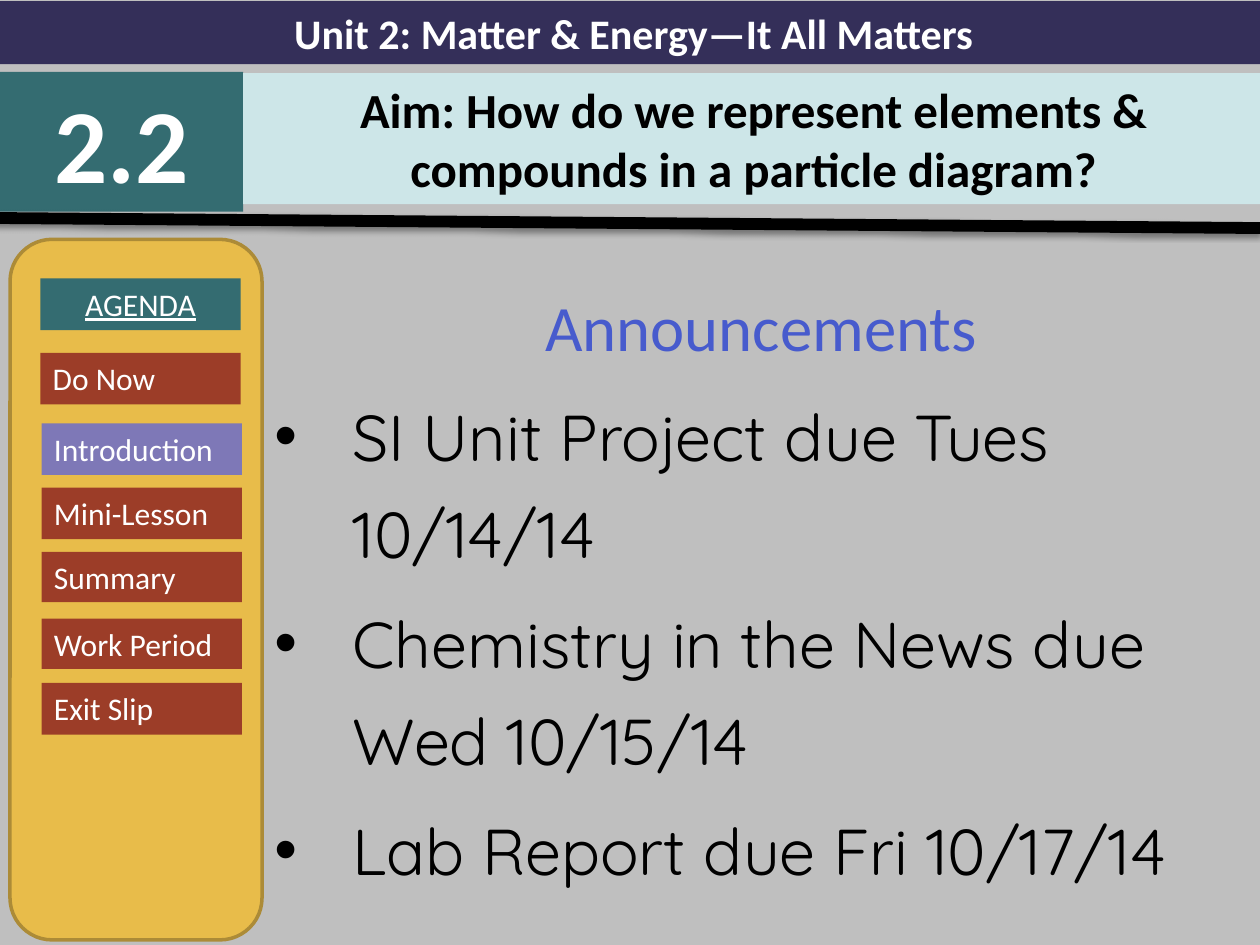
"""Builds a chemistry lesson slide with an agenda panel and announcements."""
from dataclasses import dataclass

from lxml import etree
from pptx import Presentation
from pptx.dml.color import RGBColor
from pptx.enum.shapes import MSO_CONNECTOR, MSO_SHAPE
from pptx.enum.text import MSO_AUTO_SIZE, PP_ALIGN
from pptx.oxml import parse_xml
from pptx.oxml.ns import nsdecls, qn
from pptx.util import Inches, Pt

CENTER = PP_ALIGN.CENTER
LEFT = PP_ALIGN.LEFT
GROW = MSO_AUTO_SIZE.SHAPE_TO_FIT_TEXT
STRAIGHT = MSO_CONNECTOR.STRAIGHT
ROUNDED = MSO_SHAPE.ROUNDED_RECTANGLE

WHITE, BLACK = "FFFFFF", "000000"
TEAL, RUST, VIOLET = "346C71", "9C3D28", "7E78B7"


@dataclass
class Label:
    text: str
    left: float
    top: float
    width: float
    height: float
    fill: str
    size: int = 18
    color: str = WHITE
    bold: bool = False
    underline: bool = False
    align: PP_ALIGN = LEFT


HEADER = [
    Label("Unit 2: Matter & Energy—It All Matters", 0, 0.01, 10.06, 0.5,
          "342F59", 24, bold=True, align=CENTER),
    Label("2.2", 0, 0.57, 1.93, 1.11, TEAL, 60, bold=True, align=CENTER),
    Label("Aim: How do we represent elements & compounds in a particle diagram?",
          1.93, 0.58, 8.1, 1.04, "CDE6E8", 28, BLACK, bold=True, align=CENTER),
]
AGENDA = [
    Label("AGENDA", 0.32, 2.21, 1.59, 0.41, TEAL, underline=True, align=CENTER),
    Label("Do Now", 0.32, 2.8, 1.59, 0.41, RUST),
    Label("Introduction", 0.33, 3.36, 1.59, 0.41, VIOLET),
    Label("Mini-Lesson", 0.33, 3.87, 1.59, 0.41, RUST),
    Label("Summary", 0.33, 4.38, 1.59, 0.4, RUST),
    Label("Work Period", 0.33, 4.91, 1.59, 0.4, RUST),
    Label("Exit Slip", 0.33, 5.42, 1.59, 0.41, RUST),
]
ANNOUNCEMENTS = [
    "SI Unit Project due Tues 10/14/14",
    "Chemistry in the News due Wed 10/15/14",
    "Lab Report due Fri 10/17/14",
]


def paint(color_format, color: str) -> None:
    """Set a fill or line format to a solid colour."""
    color_format.solid()
    color_format.fore_color.rgb = RGBColor.from_string(color)


def style(paragraph, font: str, size: float, color: str) -> None:
    """Set the font of a whole paragraph."""
    paragraph.font.name = font
    paragraph.font.size = Pt(size)
    paint(paragraph.font.fill, color)


def add_label(page, label: Label) -> None:
    """Draw a filled text box."""
    box = page.shapes.add_textbox(Inches(label.left), Inches(label.top),
                                  Inches(label.width), Inches(label.height))
    paint(box.fill, label.fill)
    box.text_frame.word_wrap = True
    box.text_frame.auto_size = GROW
    para = box.text_frame.paragraphs[0]
    para.text = label.text
    para.alignment = label.align
    style(para, "Calibri", label.size, label.color)
    para.font.bold = label.bold
    para.font.underline = label.underline


def add_bullet(para, indent: float) -> None:
    """Give a paragraph a hanging round bullet."""
    properties = para._p.get_or_add_pPr()
    properties.set("marL", str(Inches(indent)))
    properties.set("indent", str(-Inches(indent)))
    font = parse_xml(f'<a:buFont {nsdecls("a")} typeface="Arial"/>')
    mark = parse_xml(f'<a:buChar {nsdecls("a")} char="•"/>')
    properties.find(qn("a:defRPr")).addprevious(font)
    font.addnext(mark)


def add_announcements(page) -> None:
    """Write the heading and its bulleted list."""
    box = page.shapes.add_textbox(Inches(2.08), Inches(2.04),
                                  Inches(7.92), Inches(5.46))
    frame = box.text_frame
    frame.word_wrap = True
    heading = frame.paragraphs[0]
    heading.text = "Announcements"
    heading.alignment = CENTER
    heading.line_spacing = 1.3
    style(heading, "Calibri", 37, "475BCD")
    for text in ANNOUNCEMENTS:
        para = frame.add_paragraph()
        para.text = text
        para.line_spacing = 1.25
        para.space_before = Pt(7.4)
        style(para, "Quicksand", 37, BLACK)
        add_bullet(para, 0.62)


def add_divider(page) -> None:
    """Draw the heavy line under the header with its soft shadow."""
    divider = page.shapes.add_connector(STRAIGHT, Inches(-0.05), Inches(1.73),
                                        Inches(10), Inches(1.81))
    paint(divider.line.fill, BLACK)
    divider.line.width = Pt(6.75)
    effects = etree.SubElement(divider._element.spPr, qn("a:effectLst"))
    shadow = etree.SubElement(effects, qn("a:outerShdw"), blurRad=str(Pt(3.1)),
                              dist=str(Pt(1.6)), dir="5400000", rotWithShape="0")
    color = etree.SubElement(shadow, qn("a:srgbClr"), val=BLACK)
    etree.SubElement(color, qn("a:alpha"), val="38000")


def add_panel(page) -> None:
    """Draw the rounded panel behind the agenda."""
    panel = page.shapes.add_shape(ROUNDED, Inches(0.08), Inches(1.9),
                                  Inches(2), Inches(5.56))
    panel.shadow.inherit = False
    paint(panel.fill, "E8BC4A")
    paint(panel.line.fill, "AC8B37")
    panel.line.width = Pt(2)


def main() -> None:
    """Build and save the slide."""
    deck = Presentation()
    deck.slide_width, deck.slide_height = Inches(10), Inches(7.5)
    page = deck.slides.add_slide(deck.slide_layouts[6])
    paint(page.background.fill, "BFBFBF")
    add_announcements(page)
    for label in HEADER:
        add_label(page, label)
    add_divider(page)
    add_panel(page)
    for label in AGENDA:
        add_label(page, label)
    deck.save("out.pptx")


if __name__ == "__main__":
    main()
